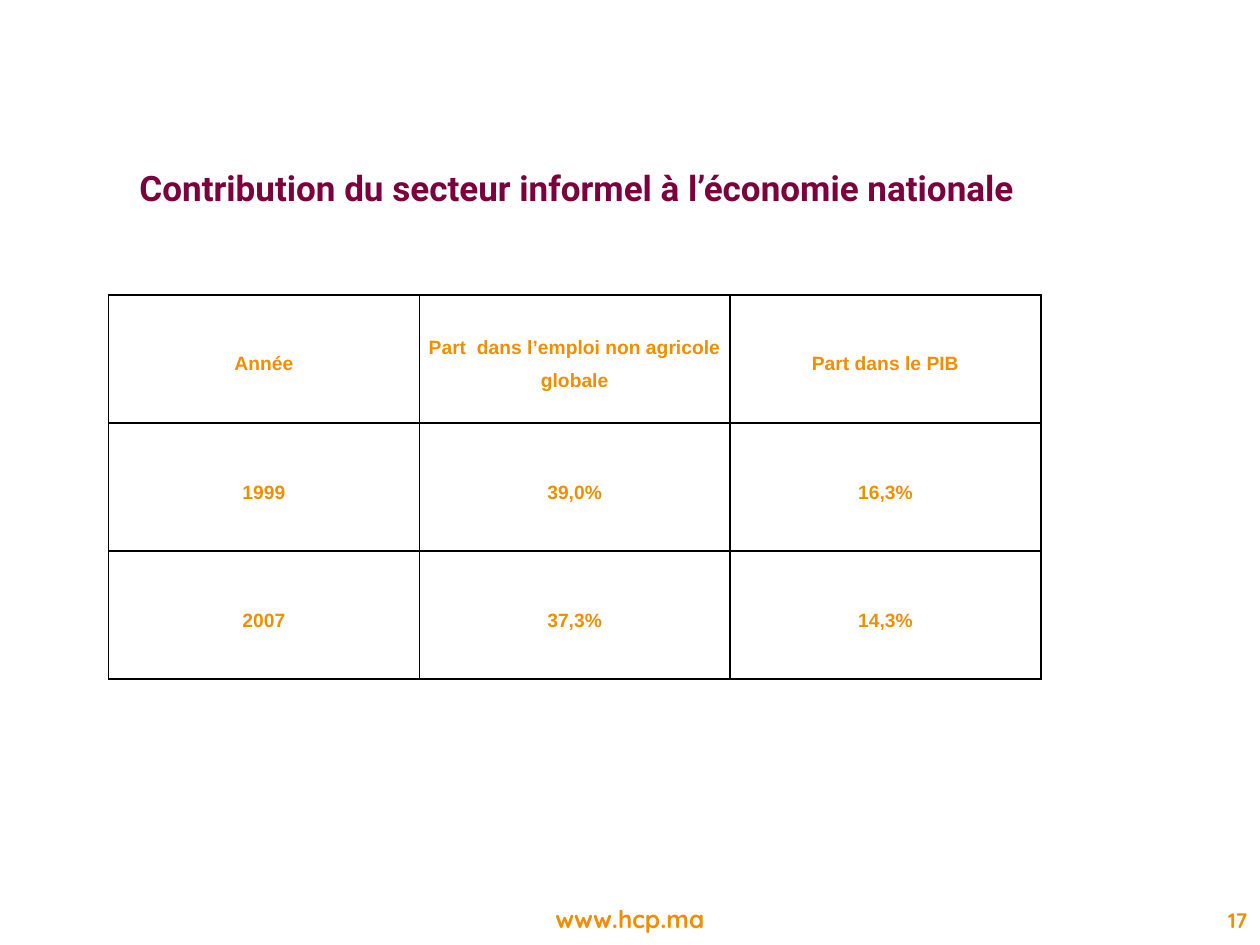
from dataclasses import dataclass

from lxml import etree
from pptx import Presentation
from pptx.dml import color
from pptx.enum import text
from pptx.oxml import ns
from pptx.util import Pt


@dataclass(frozen=True)
class Theme:
    plum: str = "7B003B"
    orange: str = "F18E00"
    border: str = "000000"
    border_width: float = 1
    title: tuple = ("Roboto", 20)
    cell: tuple = ("Arial", 11)
    address: tuple = ("Quicksand", 14)
    page: tuple = ("Quicksand", 12)


THEME = Theme()
SHARES = [
    ["Année", "Part  dans l’emploi non agricole globale", "Part dans le PIB"],
    ["1999", "39,0%", "16,3%"],
    ["2007", "37,3%", "14,3%"],
]


def apply(target, values):
    for name, value in values.items():
        setattr(target, name, value)


def write(frame, wording, face, ink, align=text.PP_ALIGN.CENTER, **spacing):
    """Fill a text frame with one bold paragraph."""
    frame.text = wording
    paragraph = frame.paragraphs[0]
    apply(paragraph, {"alignment": align, **spacing})
    font = paragraph.runs[0].font
    apply(font, {"name": face[0], "size": Pt(face[1]), "bold": True})
    font.color.rgb = color.RGBColor.from_string(ink)


def add_title(slide, wording, left, top, width, height):
    title = slide.shapes.title
    apply(title, {"left": Pt(left), "top": Pt(top),
                  "width": Pt(width), "height": Pt(height)})
    apply(title.text_frame, {"vertical_anchor": text.MSO_ANCHOR.MIDDLE,
                             "word_wrap": True,
                             "auto_size": text.MSO_AUTO_SIZE.NONE})
    write(title.text_frame, wording, THEME.title, THEME.plum, line_spacing=1.15)


def add_label(slide, wording, face, align, left, top, width, height):
    label = slide.shapes.add_textbox(Pt(left), Pt(top), Pt(width), Pt(height))
    apply(label.text_frame, {"word_wrap": True,
                             "vertical_anchor": text.MSO_ANCHOR.MIDDLE})
    write(label.text_frame, wording, face, THEME.orange, align)


def outline(cell):
    """Draw all four borders; they come before the fill in the cell XML."""
    properties = cell._tc.get_or_add_tcPr()
    for position, side in enumerate(("lnL", "lnR", "lnT", "lnB")):
        line = etree.Element(ns.qn(f"a:{side}"), w=str(Pt(THEME.border_width)))
        fill = etree.SubElement(line, ns.qn("a:solidFill"))
        etree.SubElement(fill, ns.qn("a:srgbClr"), val=THEME.border)
        properties.insert(position, line)


def add_grid(slide, rows, left, top, width, height):
    frame = slide.shapes.add_table(len(rows), len(rows[0]), Pt(left), Pt(top),
                                   Pt(width), Pt(height))
    grid = frame.table
    apply(grid, {"first_row": False, "horz_banding": False})
    for row, entries in enumerate(rows):
        for column, entry in enumerate(entries):
            cell = grid.cell(row, column)
            apply(cell, {"margin_left": Pt(3.6), "margin_right": Pt(3.6),
                         "margin_top": 0, "margin_bottom": 0,
                         "vertical_anchor": text.MSO_ANCHOR.MIDDLE})
            cell.fill.background()
            outline(cell)
            write(cell.text_frame, entry, THEME.cell, THEME.orange,
                  line_spacing=1.5, space_after=Pt(10))


def main():
    deck = Presentation()
    apply(deck, {"slide_width": Pt(720), "slide_height": Pt(540)})
    slide = deck.slides.add_slide(deck.slide_layouts[5])

    # Footer address
    add_label(slide, "www.hcp.ma", THEME.address, text.PP_ALIGN.CENTER,
              275, 513, 170, 24)
    # Heading
    add_title(slide, "Contribution du secteur informel à l’économie nationale",
              16.5, 60.5, 626.5, 90)
    # Page number
    add_label(slide, "17", THEME.page, text.PP_ALIGN.RIGHT,
              492, 511.5, 228, 28.5)
    # Shares of employment and GDP by year
    add_grid(slide, SHARES, 62, 168.5, 532.8, 219.6)

    deck.save("out.pptx")


if __name__ == "__main__":
    main()
